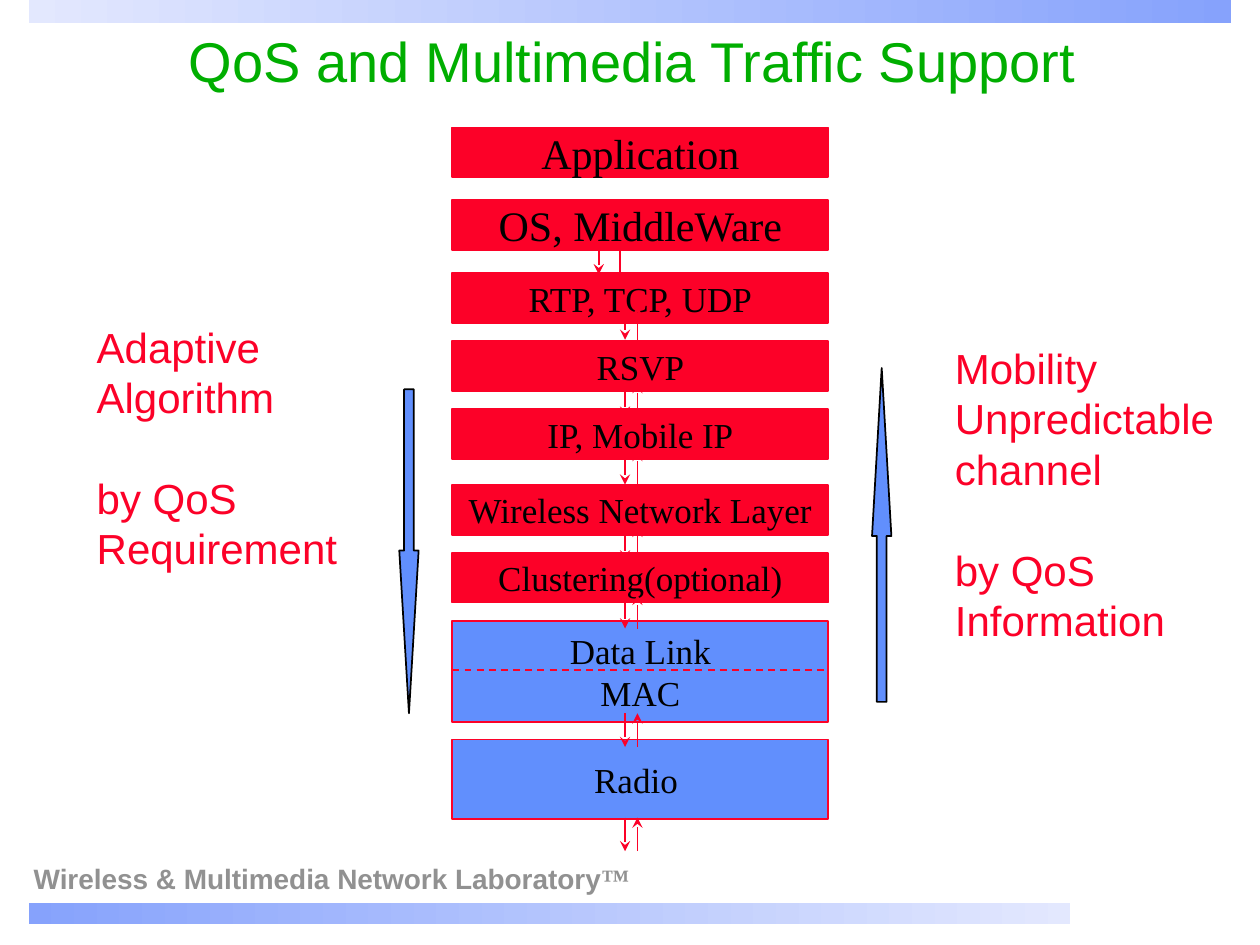
from lxml.etree import SubElement
from pptx import Presentation
from pptx.dml.color import RGBColor
from pptx.enum.dml import MSO_LINE
from pptx.enum.shapes import MSO_CONNECTOR, MSO_SHAPE
from pptx.enum.text import MSO_ANCHOR, MSO_AUTO_SIZE, PP_ALIGN
from pptx.oxml.ns import qn
from pptx.util import Cm, Pt

COLORS = {
    "red": "FC0128",
    "blue": "618FFD",
    "green": "00AE00",
    "gray": "919191",
    "black": "000000",
    "bar_dark": "86A2FC",
    "bar_light": "E3E8FE",
}
SANS, SERIF = "Arial", "Times New Roman"
STACK_LEFT, STACK_WIDTH = 9.12, 7.58
LAYERS = [
    (["Application"], 2.57, 1, "red", 24),
    (["OS, MiddleWare"], 4.04, 1, "red", 24),
    (["RTP, TCP, UDP"], 5.51, 1, "red", 20),
    (["RSVP"], 6.88, 1, "red", 20),
    (["IP, Mobile IP"], 8.25, 1, "red", 20),
    (["Wireless Network Layer"], 9.78, 1, "red", 20),
    (["Clustering(optional)"], 11.15, 1, "red", 20),
    (["Data Link", "MAC"], 12.52, 2.03, "blue", 20),
    (["Radio "], 14.91, 1.6, "blue", 20),
]
EXCHANGE_TOPS = [6.17, 7.72, 9.09, 10.62, 11.99, 14.38, 16.48]


def color(name):
    """Return the named colour."""
    return RGBColor.from_string(COLORS[name])


def add_run(paragraph, text, font=SANS, size=24, fill="red", bold=False):
    """Append formatted text to a paragraph."""
    run = paragraph.add_run()
    run.text = text
    run.font.name = font
    run.font.size = Pt(size)
    run.font.bold = bold
    run.font.color.rgb = color(fill)


def write_lines(frame, lines, align=PP_ALIGN.LEFT, gap_before=None, size=24, **font):
    """Write one paragraph per line, with one line of space before gap_before."""
    for index, line in enumerate(lines):
        paragraph = frame.paragraphs[0] if index == 0 else frame.add_paragraph()
        paragraph.alignment = align
        paragraph.line_spacing = Pt(1.2 * size)
        if index == gap_before:
            paragraph.space_before = Pt(1.2 * size)
        add_run(paragraph, line, size=size, **font)


def add_text_box(slide, left, top, width, height, wrap=True):
    """Add a text box and return its text frame."""
    frame = slide.shapes.add_textbox(Cm(left), Cm(top), Cm(width), Cm(height)).text_frame
    frame.word_wrap = wrap
    frame.auto_size = MSO_AUTO_SIZE.SHAPE_TO_FIT_TEXT
    return frame


def add_block(slide, kind, left, top, width, height, fill, line):
    """Add a filled and outlined preset shape."""
    shape = slide.shapes.add_shape(kind, Cm(left), Cm(top), Cm(width), Cm(height))
    shape.shadow.inherit = False
    shape.fill.solid()
    shape.fill.fore_color.rgb = color(fill)
    shape.line.color.rgb = color(line)
    shape.line.width = Pt(1)
    return shape


def add_bar(slide, top, width, height, start, end):
    """Add a horizontal gradient bar."""
    shape = slide.shapes.add_shape(
        MSO_SHAPE.RECTANGLE, Cm(0.58), Cm(top), Cm(width), Cm(height))
    shape.shadow.inherit = False
    shape.line.fill.background()
    shape.fill.gradient()
    shape.fill.gradient_angle = 0
    for stop, name in zip(shape.fill.gradient_stops, (start, end)):
        stop.color.rgb = color(name)


def add_layer(slide, lines, top, height, fill, size):
    """Add one labelled layer of the protocol stack."""
    shape = add_block(slide, MSO_SHAPE.RECTANGLE, STACK_LEFT, top,
                      STACK_WIDTH, height, fill, "red")
    frame = shape.text_frame
    frame.word_wrap = False
    frame.vertical_anchor = MSO_ANCHOR.MIDDLE
    write_lines(frame, lines, PP_ALIGN.CENTER, font=SERIF, size=size, fill="black")


def add_line(shapes, x1, y1, x2, y2, arrowhead=False):
    """Add a red line, with an optional arrowhead at its end."""
    connector = shapes.add_connector(
        MSO_CONNECTOR.STRAIGHT, Cm(x1), Cm(y1), Cm(x2), Cm(y2))
    connector.line.color.rgb = color("red")
    connector.line.width = Pt(1)
    if arrowhead:
        SubElement(connector.line._get_or_add_ln(), qn("a:tailEnd"), type="stealth")
    SubElement(connector._element.spPr, qn("a:effectLst"))
    return connector


def add_exchange(slide, top, down_x=12.6, up_x=12.85):
    """Add a grouped pair of down and up arrows."""
    group = slide.shapes.add_group_shape()
    bottom = top + 0.68
    add_line(group.shapes, down_x, top, down_x, bottom, arrowhead=True)
    add_line(group.shapes, up_x, bottom, up_x, top, arrowhead=True)


def add_flow_arrow(slide, kind, left, top, height, head_ratio):
    """Add a tall narrow block arrow."""
    shape = add_block(slide, kind, left, top, 0.39, height, "blue", "black")
    shape.adjustments[0] = 0.5
    shape.adjustments[1] = head_ratio


def add_footer(slide):
    """Add the laboratory name above the lower bar."""
    paragraph = add_text_box(slide, 0.43, 17.32, 12.7, 0.86).paragraphs[0]
    paragraph.line_spacing = 0.9
    for text, font in (("Wireless & Multimedia Network Laboratory", SANS), ("™", SERIF)):
        add_run(paragraph, text, font=font, size=16, fill="gray", bold=True)


def main():
    """Build and save the slide."""
    presentation = Presentation()
    presentation.slide_width, presentation.slide_height = Cm(25.4), Cm(19.05)
    slide = presentation.slides.add_slide(presentation.slide_layouts[6])

    add_bar(slide, 18.2, 21, 0.42, "bar_dark", "bar_light")
    add_bar(slide, 0, 24.23, 0.46, "bar_light", "bar_dark")
    add_footer(slide)
    write_lines(add_text_box(slide, 19, 6.78, 5.74, 6.35, wrap=False),
                ["Mobility", "Unpredictable", "channel", "by QoS", "Information"],
                gap_before=3)
    write_lines(add_text_box(slide, 1.7, 6.35, 5.36, 5.33, wrap=False),
                ["Adaptive", "Algorithm", "by QoS", "Requirement"], gap_before=2)
    write_lines(add_text_box(slide, 3.56, 0.41, 19.1, 1.6),
                ["QoS and Multimedia Traffic Support"], size=32, fill="green")

    add_exchange(slide, 4.85, down_x=12.07, up_x=12.5)
    for layer in LAYERS:
        add_layer(slide, *layer)
    for top in EXCHANGE_TOPS:
        add_exchange(slide, top)
    divider = add_line(slide.shapes, STACK_LEFT, 13.51, STACK_LEFT + STACK_WIDTH, 13.51)
    divider.line.dash_style = MSO_LINE.DASH

    add_flow_arrow(slide, MSO_SHAPE.DOWN_ARROW, 8.05, 7.85, 6.53, 8.41)
    add_flow_arrow(slide, MSO_SHAPE.UP_ARROW, 17.58, 7.42, 6.73, 8.68)
    presentation.save("out.pptx")


if __name__ == "__main__":
    main()
